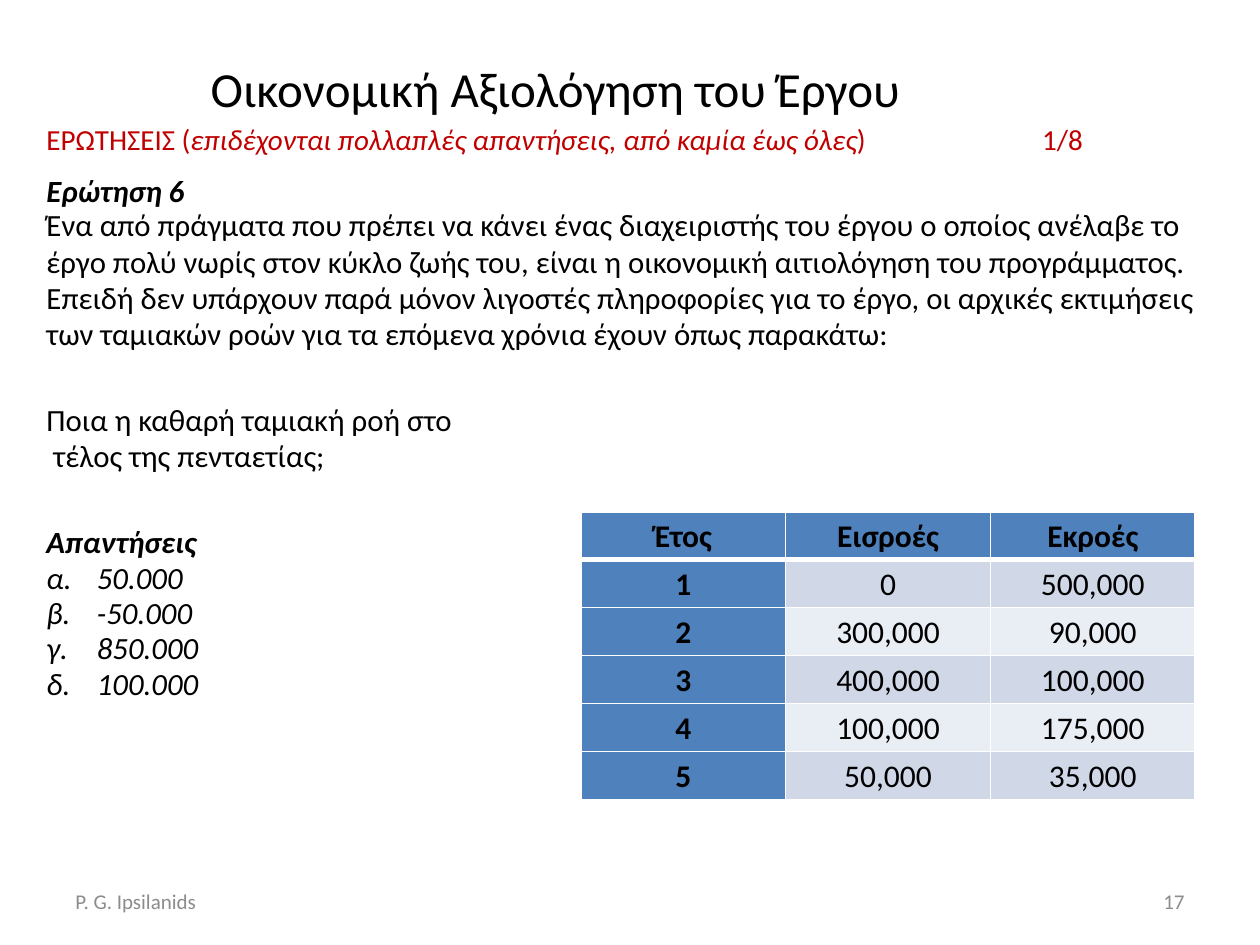
from lxml.etree import SubElement
from pptx import Presentation
from pptx.dml.color import RGBColor
from pptx.enum.text import MSO_ANCHOR as Anchor, PP_ALIGN as Align
from pptx.oxml.ns import qn
from pptx.util import Pt

BLACK, RED, GREY, WHITE = "000000", "C00000", "8C8C8C", "FFFFFF"
HEADER, BAND_DARK, BAND_LIGHT = "4F81BD", "D0D8E8", "E9EDF4"


def write(para, text, size=17.6, color=BLACK, bold=False, italic=False,
          align=Align.LEFT, spacing=1.0, before=0):
    """Append one span to para and set the paragraph's layout."""
    para.alignment, para.line_spacing = align, spacing
    para.space_before = Pt(before)
    span = para.add_run()
    span.text = text
    font = span.font
    font.name, font.size, font.bold, font.italic = "Calibri", Pt(size), bold, italic
    font.color.rgb = RGBColor.from_string(color)


def add_box(left, top, width, height, anchor=Anchor.MIDDLE):
    frame = slide.shapes.add_textbox(Pt(left), Pt(top), Pt(width), Pt(height)).text_frame
    frame.word_wrap = True
    frame.vertical_anchor = anchor
    return frame


deck = Presentation()
deck.slide_width, deck.slide_height = Pt(720), Pt(540)
slide = deck.slides.add_slide(deck.slide_layouts[6])

# Title and footer
title = add_box(19.5, 20, 595.5, 61)
write(title.paragraphs[0], "Οικονομική Αξιολόγηση του Έργου", size=28, align=Align.CENTER)
for left, text, align in ((36, "P. G. Ipsilanids", Align.LEFT), (516, "17", Align.RIGHT)):
    footer = add_box(left, 500.5, 168, 29)
    write(footer.paragraphs[0], text, size=12, color=GREY, align=align)

# Question
body = add_box(19.5, 71.5, 700.5, 445.5, Anchor.TOP)
heading = body.paragraphs[0]
tabs = SubElement(heading._p.get_or_add_pPr(), qn("a:tabLst"))
SubElement(tabs, qn("a:tab"), pos=str(Pt(569)), algn="l")
for text, italic in (("ΕΡΩΤΗΣΕΙΣ (", False),
                     ("επιδέχονται πολλαπλές απαντήσεις, από καμία έως όλες", True),
                     (")\t1/8", False)):
    write(heading, text, size=16.6, color=RED, italic=italic, spacing=0.7)

write(body.add_paragraph(), "Ερώτηση 6", bold=True, italic=True, spacing=0.8, before=13)
write(body.add_paragraph(),
      "Ένα από πράγματα που πρέπει να κάνει ένας διαχειριστής του έργου ο οποίος "
      "ανέλαβε το έργο πολύ νωρίς στον κύκλο ζωής του, είναι η οικονομική αιτιολόγηση "
      "του προγράμματος. Επειδή δεν υπάρχουν παρά μόνον λιγοστές πληροφορίες για το "
      "έργο, οι αρχικές εκτιμήσεις των ταμιακών ροών για τα επόμενα χρόνια έχουν όπως "
      "παρακάτω:", spacing=0.98)
question = body.add_paragraph()
write(question, "Ποια η καθαρή ταμιακή ροή στο")
question.add_line_break()
write(question, " τέλος της πενταετίας;", spacing=0.98, before=28.5)

# Answers
write(body.add_paragraph(), "Απαντήσεις", bold=True, italic=True, spacing=0.98, before=28)
for letter, amount in zip("αβγδ", ("50.000", "-50.000", "850.000", "100.000")):
    answer = body.add_paragraph()
    layout = answer._p.get_or_add_pPr()
    layout.set("marL", str(Pt(28.8)))
    layout.set("indent", str(-Pt(28.8)))
    write(answer, f"{letter}.\t{amount}", italic=True, spacing=0.8, before=3.2)

# Cash flow table
flows = (
    ("Έτος", "Εισροές", "Εκροές"),
    ("1", "0", "500,000"),
    ("2", "300,000", "90,000"),
    ("3", "400,000", "100,000"),
    ("4", "100,000", "175,000"),
    ("5", "50,000", "35,000"),
)
table = slide.shapes.add_table(len(flows), 3, Pt(332), Pt(292.5), Pt(351), Pt(164.4)).table
for row_index, row in enumerate(flows):
    table.rows[row_index].height = Pt(27.4)
    for column_index, text in enumerate(row):
        cell = table.cell(row_index, column_index)
        cell.margin_left = cell.margin_right = Pt(5)
        cell.margin_top = cell.margin_bottom = 0
        is_header = row_index == 0 or column_index == 0
        write(cell.text_frame.paragraphs[0], text, size=18, bold=is_header,
              align=Align.CENTER, spacing=1.15)
        properties = cell._tc.get_or_add_tcPr()
        for side in ("lnL", "lnR", "lnT", "lnB"):
            at_header_rule = (row_index, side) in ((0, "lnB"), (1, "lnT"))
            line = SubElement(properties, qn(f"a:{side}"), w=str(Pt(3 if at_header_rule else 1)))
            SubElement(SubElement(line, qn("a:solidFill")), qn("a:srgbClr"), val=WHITE)
        cell.fill.solid()
        band = BAND_DARK if row_index % 2 else BAND_LIGHT
        cell.fill.fore_color.rgb = RGBColor.from_string(HEADER if is_header else band)

deck.save("out.pptx")
